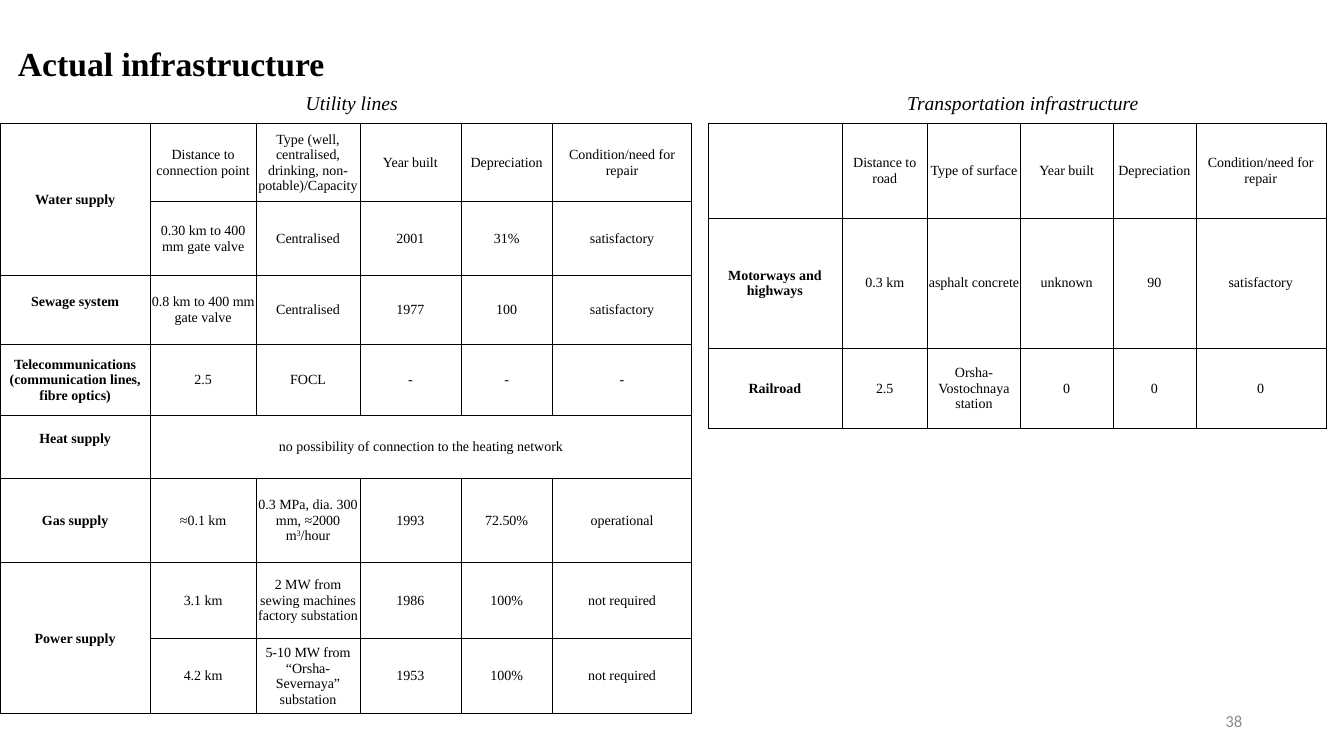
"""Build the slide on actual utility and transportation infrastructure."""
from dataclasses import dataclass
from typing import Any, Optional

from lxml import etree
from pptx import Presentation
from pptx.dml.color import RGBColor
from pptx.enum.shapes import MSO_SHAPE
from pptx.enum.text import MSO_ANCHOR, PP_ALIGN
from pptx.oxml.ns import qn
from pptx.util import Inches, Pt

RECTANGLE = MSO_SHAPE.RECTANGLE
TOP, MIDDLE = MSO_ANCHOR.TOP, MSO_ANCHOR.MIDDLE
LEFT, CENTER, RIGHT = PP_ALIGN.LEFT, PP_ALIGN.CENTER, PP_ALIGN.RIGHT
BLACK = RGBColor(0x00, 0x00, 0x00)
WHITE = RGBColor(0xFF, 0xFF, 0xFF)
GRAY = RGBColor(0x8C, 0x8C, 0x8C)
SERIF, SANS = "Times New Roman", "Calibri"

BORDER_WIDTH = Pt(0.25)
CELL_MARGINS = {
    "margin_left": Inches(0.01),
    "margin_right": Inches(0.01),
    "margin_top": Inches(0.01),
    "margin_bottom": Inches(0),
    "vertical_anchor": MIDDLE,
}
RAISED_MARGINS = CELL_MARGINS | {"margin_bottom": Inches(0.16)}
PLAIN_TABLE = {"first_row": False, "horz_banding": False}
CELL_FONT = {"name": SERIF, "size": Pt(10), "bold": False}
LABEL_FONT = CELL_FONT | {"bold": True}
HEADING_FONT = {"name": SERIF, "size": Pt(14), "italic": True}
TIGHT = {"line_spacing": 0.9}
HEADING_SPACING = TIGHT | {"space_before": Pt(10)}

Row = tuple[Optional[str], ...]


@dataclass(frozen=True)
class Label:
    text: str
    place: tuple[float, float, float, float]
    font: dict[str, Any]
    alignment: PP_ALIGN
    spacing: dict[str, Any]
    anchor: MSO_ANCHOR = MIDDLE
    color: RGBColor = BLACK
    framed: bool = False


@dataclass(frozen=True)
class Grid:
    left: float
    widths: tuple[float, ...]
    heights: tuple[float, ...]
    rows: tuple[Row, ...]
    merges: tuple[tuple[int, int, int, int], ...] = ()
    raised: tuple[str, ...] = ()
    top: float = 1.22


LABELS = (
    Label("Actual infrastructure", (0.08, 0.23, 11.5, 0.84),
          {"name": SERIF, "size": Pt(24), "bold": True}, LEFT, TIGHT),
    Label("Utility lines", (0.19, 0.88, 6.6, 6.4),
          HEADING_FONT, CENTER, HEADING_SPACING, TOP, framed=True),
    Label("Transportation infrastructure", (6.94, 0.88, 6.41, 2.58),
          HEADING_FONT, CENTER, HEADING_SPACING, TOP, framed=True),
)
PAGE_NUMBER = Label("38", (9.42, 6.95, 3, 0.4),
                    {"name": SANS, "size": Pt(12)}, RIGHT, {}, color=GRAY)

TRANSPORT = Grid(
    7.02, (1.33, 0.85, 0.92, 0.92, 0.82, 1.29), (0.94, 1.29, 0.8),
    (
        (None, "Distance to road", "Type of surface", "Year built",
         "Depreciation", "Condition/need for repair"),
        ("Motorways and highways", "0.3 km", "asphalt concrete", "unknown",
         "90", "satisfactory"),
        ("Railroad", "2.5", "Orsha-Vostochnaya station", "0", "0", "0"),
    ),
)
UTILITIES = Grid(
    0, (1.49, 1.05, 1.03, 1, 0.91, 1.38),
    (0.78, 0.73, 0.68, 0.71, 0.62, 0.84, 0.75, 0.75),
    (
        ("Water supply", "Distance to connection point",
         "Type (well, centralised, drinking, non-potable)/Capacity",
         "Year built", "Depreciation", "Condition/need for repair"),
        (None, "0.30 km to 400 mm gate valve", "Centralised", "2001", "31%",
         "satisfactory"),
        ("Sewage system", "0.8 km to 400 mm gate valve", "Centralised",
         "1977", "100", "satisfactory"),
        ("Telecommunications (communication lines, fibre optics)", "2.5",
         "FOCL", "-", "-", "-"),
        ("Heat supply", "no possibility of connection to the heating network",
         None, None, None, None),
        ("Gas supply", "≈0.1 km", "0.3 MPa, dia. 300 mm, ≈2000 m^3^/hour",
         "1993", "72.50%", "operational"),
        ("Power supply", "3.1 km",
         "2 MW from sewing machines factory substation", "1986", "100%",
         "not required"),
        (None, "4.2 km", "5-10 MW from “Orsha-Severnaya” substation", "1953",
         "100%", "not required"),
    ),
    merges=((0, 0, 1, 0), (4, 1, 4, 5), (6, 0, 7, 0)),
    raised=("Sewage system", "Heat supply"),
)


def apply(target: Any, formats: dict[str, Any]) -> None:
    """Set each format value on the target."""
    for name, value in formats.items():
        setattr(target, name, value)


def write(para: Any, text: str, font: dict[str, Any], color: RGBColor) -> None:
    """Write text into a paragraph, raising parts between carets."""
    for index, part in enumerate(text.split("^")):
        span = para.add_run()
        span.text = part
        apply(span.font, font)
        span.font.color.rgb = color
        if index % 2:
            span._r.get_or_add_rPr().set("baseline", "30000")


def draw_label(page: Any, label: Label) -> None:
    """Draw one text label, with a white frame where asked."""
    place = [Inches(length) for length in label.place]
    if label.framed:
        box = page.shapes.add_shape(RECTANGLE, *place)
        box.shadow.inherit = False
        box.fill.background()
        box.line.color.rgb = WHITE
        box.line.width = Pt(0.75)
    else:
        box = page.shapes.add_textbox(*place)
    apply(box.text_frame, {"word_wrap": True, "vertical_anchor": label.anchor})
    para = box.text_frame.paragraphs[0]
    apply(para, {"alignment": label.alignment} | label.spacing)
    write(para, label.text, label.font, label.color)


def outline(cell: Any) -> None:
    """Give a cell thin black borders on all sides."""
    properties = cell._tc.get_or_add_tcPr()
    for index, side in enumerate(("a:lnL", "a:lnR", "a:lnT", "a:lnB")):
        border = etree.Element(qn(side), w=str(BORDER_WIDTH))
        fill = etree.SubElement(border, qn("a:solidFill"))
        etree.SubElement(fill, qn("a:srgbClr"), val=str(BLACK))
        properties.insert(index, border)


def draw_grid(page: Any, grid: Grid) -> None:
    """Draw one bordered table with bold row names."""
    frame = page.shapes.add_table(
        len(grid.heights), len(grid.widths), Inches(grid.left),
        Inches(grid.top), Inches(sum(grid.widths)), Inches(sum(grid.heights)))
    table = frame.table
    apply(table, PLAIN_TABLE)
    for column, width in zip(table.columns, grid.widths):
        column.width = Inches(width)
    for row, height in zip(table.rows, grid.heights):
        row.height = Inches(height)
    for row, texts in zip(table.rows, grid.rows):
        for index, (cell, text) in enumerate(zip(row.cells, texts)):
            apply(cell, RAISED_MARGINS if text in grid.raised else CELL_MARGINS)
            cell.fill.background()
            outline(cell)
            if text:
                para = cell.text_frame.paragraphs[0]
                para.alignment = CENTER
                write(para, text, CELL_FONT if index else LABEL_FONT, BLACK)
    for top, left, bottom, right in grid.merges:
        table.cell(top, left).merge(table.cell(bottom, right))


def main() -> None:
    """Assemble and save the deck."""
    deck = Presentation()
    apply(deck, {"slide_width": Inches(13.33), "slide_height": Inches(7.5)})
    page = deck.slides.add_slide(deck.slide_layouts[6])
    for label in LABELS:
        draw_label(page, label)
    for grid in (TRANSPORT, UTILITIES):
        draw_grid(page, grid)
    draw_label(page, PAGE_NUMBER)
    deck.save("out.pptx")


if __name__ == "__main__":
    main()
